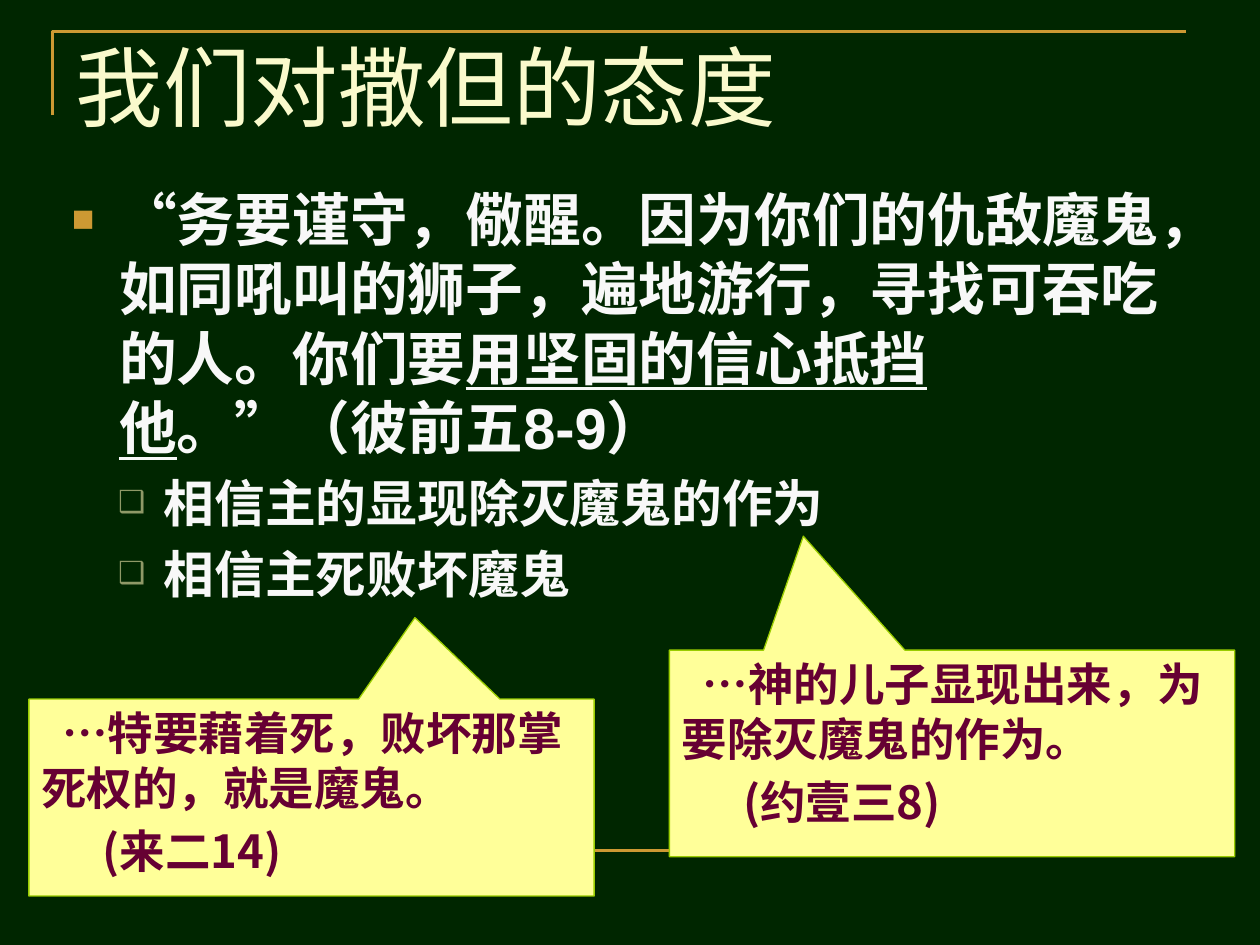
from lxml import etree
from pptx import Presentation
from pptx.dml.color import RGBColor
from pptx.enum import lang, shapes, text
from pptx.oxml import ns
from pptx.util import Pt

CJK = "Noto Sans CJK SC"


def colour(value):
    """Turn a hex string into a colour."""
    return RGBColor.from_string(value)


def add_element(parent, tag, **attributes):
    """Append a drawing element to its parent."""
    return etree.SubElement(parent, ns.qn(tag), attributes)


def add_run(paragraph, words, size, face, ink, bold=False, underline=None):
    """Add one run of Chinese text."""
    run = paragraph.add_run()
    run.text = words
    font = run.font
    font.size, font.name, font.bold, font.underline = Pt(size), face, bold, underline
    font.color.rgb = colour(ink)
    font.language_id = lang.MSO_LANGUAGE_ID.SIMPLIFIED_CHINESE
    add_element(font._element, "a:ea", typeface=CJK)


def set_indent(paragraph, left, first):
    """Set the left margin and first-line indent in points."""
    properties = paragraph._p.get_or_add_pPr()
    properties.set("marL", str(Pt(left)))
    properties.set("indent", str(Pt(first)))
    return properties


def set_bullet(paragraph, left, first, mark, ink, percent):
    """Give a paragraph a coloured, scaled bullet."""
    properties = set_indent(paragraph, left, first)
    add_element(add_element(properties, "a:buClr"), "a:srgbClr", val=ink)
    add_element(properties, "a:buSzPct", val=str(percent * 1000))
    add_element(properties, "a:buFont", typeface="Arial")
    add_element(properties, "a:buChar", char=mark)


def add_frame(slide, left, top, width, height):
    """Draw the gold corner and the rule at the foot."""
    builder = slide.shapes.build_freeform(Pt(left), Pt(top + 48), scale=1.0)
    builder.add_line_segments(
        [(Pt(left), Pt(top)), (Pt(left + width), Pt(top))], close=False)
    corner = builder.convert_to_shape()
    corner.fill.background()
    corner.shadow.inherit = False
    foot = top + height
    rule = slide.shapes.add_connector(
        shapes.MSO_CONNECTOR.STRAIGHT,
        Pt(left + 6), Pt(foot), Pt(left + 6 + width), Pt(foot))
    add_element(rule._element.spPr, "a:effectLst")
    for part in (corner, rule):
        part.line.color.rgb = colour("CC9933")
        part.line.width = Pt(1.5)


def add_title(slide, left, top, width, height):
    """Place and format the title."""
    title = slide.shapes.title
    title.left, title.top, title.width, title.height = map(Pt, (left, top, width, height))
    frame = title.text_frame
    frame.vertical_anchor = text.MSO_ANCHOR.TOP
    paragraph = frame.paragraphs[0]
    paragraph.alignment = text.PP_ALIGN.LEFT
    add_run(paragraph, "我们对撒但的态度", 50, "Times New Roman", "FAFACC")


def add_verse(slide, left, top, width, height):
    """Write the quoted verse and its two points."""
    frame = slide.shapes.add_textbox(*map(Pt, (left, top, width, height))).text_frame
    frame.word_wrap = True
    verse = frame.paragraphs[0]
    set_bullet(verse, 27, -27, "■", "CC9933", 65)
    quote = [
        ("“务要谨守，儆醒。因为你们的仇敌魔鬼，如同吼叫的狮子，遍地游行，寻找可吞吃的人。你们要", False),
        ("用坚固的信心抵挡他", True),
        ("。”（彼前五8-9）", False),
    ]
    for words, underline in quote:
        add_run(verse, words, 33, "Arial", "F8F8F8", True, underline)
    for words in ("相信主的显现除灭魔鬼的作为", "相信主死败坏魔鬼"):
        point = frame.add_paragraph()
        set_bullet(point, 52.5, -26, "❑", "8F9967", 60)
        point.space_before = Pt(6)
        add_run(point, words, 29, CJK, "F8F8F8", True)


def add_callout(slide, box, tip, words, reference):
    """Draw a callout holding a quotation and its reference."""
    callout = slide.shapes.add_shape(
        shapes.MSO_SHAPE.RECTANGULAR_CALLOUT, *map(Pt, box))
    callout.adjustments[0], callout.adjustments[1] = tip
    callout.shadow.inherit = False
    callout.fill.solid()
    callout.fill.fore_color.rgb = colour("FFFF99")
    callout.line.color.rgb = colour("99CC00")
    callout.line.width = Pt(0.75)
    frame = callout.text_frame
    frame.word_wrap = True
    frame.vertical_anchor = text.MSO_ANCHOR.TOP
    quotation, source = frame.paragraphs[0], frame.add_paragraph()
    source.space_before = Pt(5)
    for paragraph, line, first in ((quotation, words, 12), (source, reference, 35)):
        paragraph.alignment = text.PP_ALIGN.LEFT
        set_indent(paragraph, 0, first)
        add_run(paragraph, line, 26, CJK, "660033", True)


def main():
    """Build and save the slide."""
    deck = Presentation()
    deck.slide_width, deck.slide_height = Pt(720), Pt(540)
    slide = deck.slides.add_slide(deck.slide_layouts[5])
    slide.background.fill.solid()
    slide.background.fill.fore_color.rgb = colour("002600")
    add_frame(slide, 30, 18, 648, 468)
    add_verse(slide, 34, 101.5, 648, 516)
    add_title(slide, 36, 15, 648, 96.5)
    add_callout(slide, (382.5, 371.5, 323, 118), (-0.263, -1.052),
                "…神的儿子显现出来，为要除灭魔鬼的作为。", "(约壹三8)")
    add_callout(slide, (16.5, 399.5, 323, 112.5), (0.183, -0.914),
                "…特要藉着死，败坏那掌死权的，就是魔鬼。", "(来二14)")
    deck.save("out.pptx")


if __name__ == "__main__":
    main()
